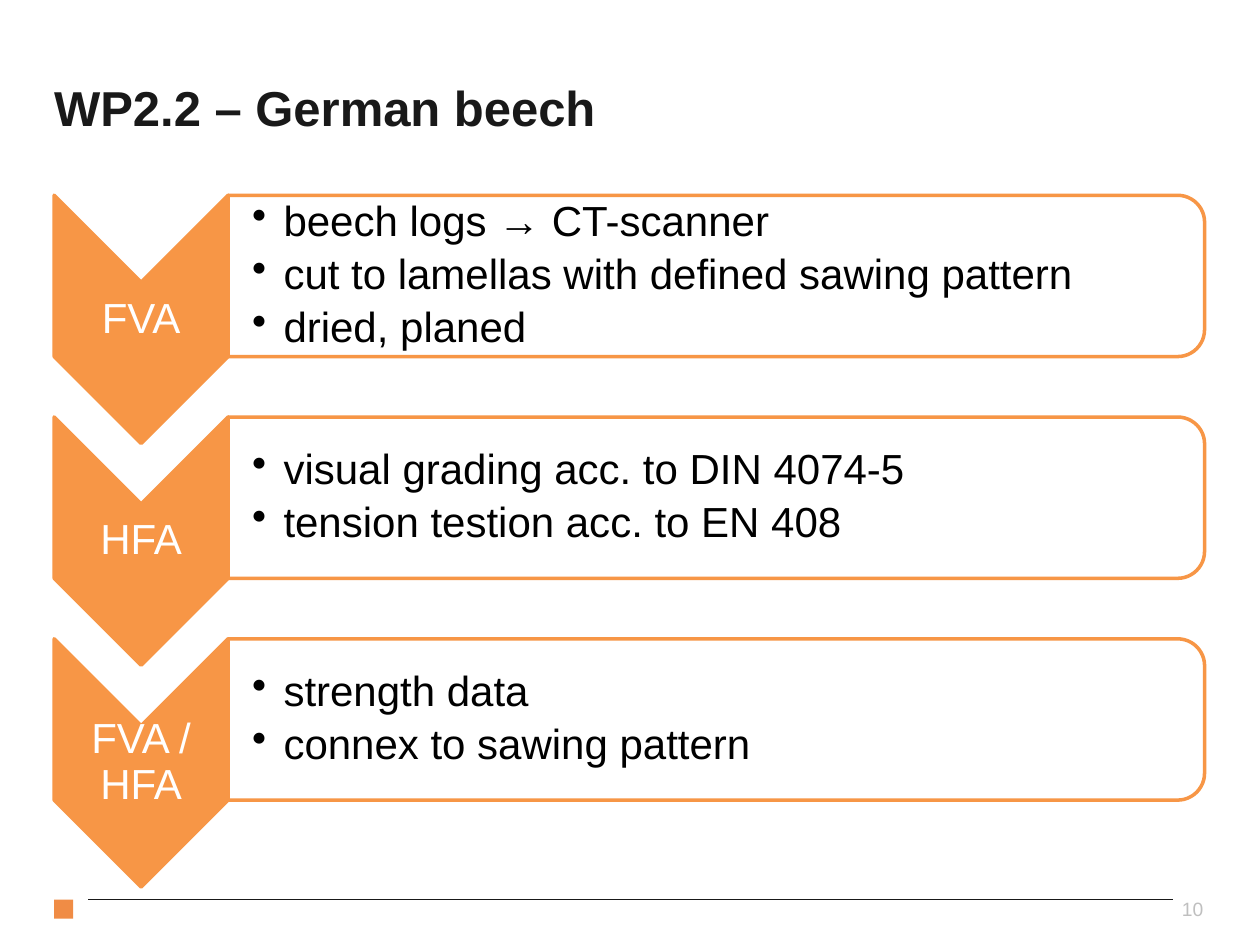
from dataclasses import dataclass

from lxml import etree
from pptx import Presentation
from pptx.dml.color import RGBColor
from pptx.enum.shapes import MSO_CONNECTOR, MSO_SHAPE
from pptx.enum.text import MSO_ANCHOR, MSO_AUTO_SIZE, PP_ALIGN
from pptx.oxml.ns import qn
from pptx.util import Inches, Pt

STRAIGHT = MSO_CONNECTOR.STRAIGHT
CHEVRON = MSO_SHAPE.CHEVRON
RECTANGLE = MSO_SHAPE.RECTANGLE
ROUNDED_END = MSO_SHAPE.ROUND_2_SAME_RECTANGLE
TOP, MIDDLE, BOTTOM = MSO_ANCHOR.TOP, MSO_ANCHOR.MIDDLE, MSO_ANCHOR.BOTTOM
LEFT, CENTER = PP_ALIGN.LEFT, PP_ALIGN.CENTER
NO_FIT = MSO_AUTO_SIZE.NONE

PAGE_WIDTH, PAGE_HEIGHT = 10, 7.5
FONT = "Arial"
ORANGE, ACCENT, INK = "F79646", "F08C45", "191919"
WHITE, BLACK, GREY = "FFFFFF", "000000", "BFBFBF"

MARGIN = 0.43
FIRST_ROW, ROW_PITCH = 1.55, 1.76
CHEVRON_WIDTH, CHEVRON_HEIGHT = 1.38, 1.97
PANEL_LEFT = MARGIN + CHEVRON_WIDTH
PANEL_WIDTH, PANEL_HEIGHT = 7.75, 1.28
LABEL_HEIGHT, LIST_WIDTH, LIST_HEIGHT = 0.59, 7.69, 1.16
FOOTER_TOP = 7.14
INSET = 0.02


@dataclass
class Area:
    left: float
    top: float
    width: float
    height: float

    def lengths(self):
        return [Inches(n) for n in (self.left, self.top, self.width, self.height)]

    def inner(self, width: float, height: float, left: float | None = None):
        if left is None:
            left = self.left + (self.width - width) / 2
        return Area(left, self.top + (self.height - height) / 2, width, height)


@dataclass
class Step:
    label: str
    tasks: list[str]


STEPS = [
    Step("FVA", ["beech logs → CT-scanner",
                 "cut to lamellas with defined sawing pattern",
                 "dried, planed"]),
    Step("HFA", ["visual grading acc. to DIN 4074-5",
                 "tension testion acc. to EN 408"]),
    Step("FVA / HFA", ["strength data", "connex to sawing pattern"]),
]


def color(value: str) -> RGBColor:
    return RGBColor.from_string(value)


def set_frame(box, anchor, insets: tuple) -> None:
    frame = box.text_frame
    frame.word_wrap = True
    frame.auto_size = NO_FIT
    frame.vertical_anchor = anchor
    (frame.margin_left, frame.margin_top,
     frame.margin_right, frame.margin_bottom) = [Inches(n) for n in insets]


def set_font(para, size: float, value: str, bold: bool = False) -> None:
    for span in para.runs:
        span.font.name = FONT
        span.font.size = Pt(size)
        span.font.bold = bold
        span.font.color.rgb = color(value)


def add_text(page, area: Area, text: str, size: float, value: str,
             anchor=MIDDLE, align=LEFT, insets: tuple = (0, 0, 0, 0)):
    box = page.shapes.add_textbox(*area.lengths())
    box.text_frame.text = text
    set_frame(box, anchor, insets)
    for para in box.text_frame.paragraphs:
        para.alignment = align
        para.line_spacing = 0.9
        set_font(para, size, value)
    return box


def add_bullet(para) -> None:
    properties = para._p.get_or_add_pPr()
    properties.set("marL", str(Inches(0.25)))
    properties.set("indent", str(-Inches(0.25)))
    etree.SubElement(properties, qn("a:buChar")).set("char", "•")


def add_block(page, kind, area: Area, fill: str, line: str | None = None):
    block = page.shapes.add_shape(kind, *area.lengths())
    block.shadow.inherit = False
    block.fill.solid()
    block.fill.fore_color.rgb = color(fill)
    if line:
        block.line.color.rgb = color(line)
        block.line.width = Pt(2)
    else:
        block.line.fill.background()
    return block


def add_turned(page, kind, area: Area, fill: str):
    block = add_block(page, kind, area.inner(area.height, area.width), fill, ORANGE)
    block.rotation = 90
    return block


def add_step(page, row: int, step: Step) -> None:
    top = FIRST_ROW + row * ROW_PITCH
    marker = Area(MARGIN, top, CHEVRON_WIDTH, CHEVRON_HEIGHT)
    panel = Area(PANEL_LEFT, top, PANEL_WIDTH, PANEL_HEIGHT)
    add_turned(page, CHEVRON, marker, ORANGE)
    add_text(page, marker.inner(CHEVRON_WIDTH, LABEL_HEIGHT), step.label, 24,
             WHITE, align=CENTER, insets=(INSET,) * 4)
    frame = add_turned(page, ROUNDED_END, panel, WHITE)
    tint = frame._element.spPr.find(qn("a:solidFill"))[0]
    etree.SubElement(tint, qn("a:alpha")).set("val", "90000")
    box = add_text(page, panel.inner(LIST_WIDTH, LIST_HEIGHT, PANEL_LEFT),
                   "\n".join(step.tasks), 24, BLACK,
                   insets=(0.19, INSET, INSET, INSET))
    for para in box.text_frame.paragraphs:
        para.space_after = Pt(4.5)
        add_bullet(para)


def add_title(page, text: str) -> None:
    title = page.shapes.title
    title.left, title.top, title.width, title.height = Area(
        MARGIN, 0.57, 6.62, 0.51).lengths()
    title.text_frame.text = text
    set_frame(title, BOTTOM, (0, 0, 0, 0))
    para = title.text_frame.paragraphs[0]
    para.alignment = LEFT
    para.line_spacing = Pt(28)
    para.space_after = Pt(12)
    set_font(para, 28, INK, bold=True)


def add_footer(page, number: str) -> None:
    rule = page.shapes.add_connector(STRAIGHT, Inches(0.7), Inches(FOOTER_TOP),
                                     Inches(9.31), Inches(FOOTER_TOP))
    rule.line.color.rgb = color(INK)
    rule.line.width = Pt(1)
    etree.SubElement(rule._element.spPr, qn("a:effectLst"))
    add_block(page, RECTANGLE, Area(MARGIN, FOOTER_TOP, 0.15, 0.15), ACCENT)
    box = add_text(page, Area(9.38, 7.12, 0.31, 0.15), number, 11, GREY, anchor=TOP)
    box.text_frame.paragraphs[0].line_spacing = 1.0


def main() -> None:
    deck = Presentation()
    deck.slide_width = Inches(PAGE_WIDTH)
    deck.slide_height = Inches(PAGE_HEIGHT)
    page = deck.slides.add_slide(deck.slide_layouts[5])
    add_footer(page, "10")
    add_title(page, "WP2.2 – German beech")
    for row, step in enumerate(STEPS):
        add_step(page, row, step)
    deck.save("out.pptx")


if __name__ == "__main__":
    main()
